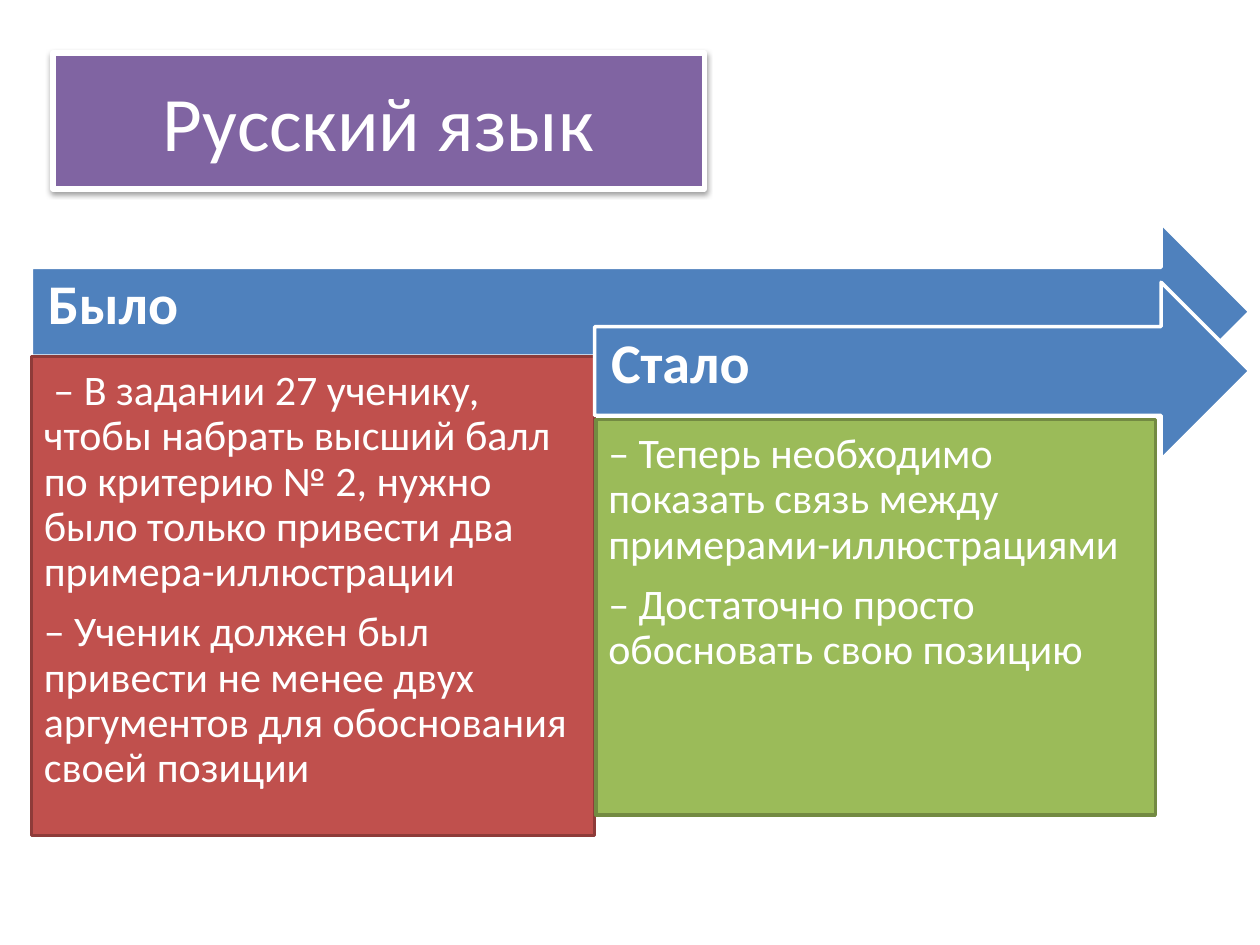
from lxml import etree
from pptx import Presentation, util as u
from pptx.dml.color import RGBColor
from pptx.enum import shapes, text
from pptx.oxml import parse_xml
from pptx.oxml.ns import nsdecls, qn

FONT = "Calibri"
WHITE = "FFFFFF"
BLUE = "4F81BD"


def rgb(hex_color):
    return RGBColor.from_string(hex_color)


def paint(sp, fill, line, width):
    sp.fill.solid()
    sp.fill.fore_color.rgb = rgb(fill)
    sp.line.color.rgb = rgb(line)
    sp.line.width = u.Pt(width)


def write(sp, *paragraphs, size, bold=False, align=text.PP_ALIGN.LEFT,
          anchor=text.MSO_ANCHOR.TOP, insets=(0.1, 0.1, 0.1, 0.1),
          spacing=0.9, after=0):
    tf = sp.text_frame
    tf.word_wrap = True
    tf.auto_size = text.MSO_AUTO_SIZE.NONE
    tf.vertical_anchor = anchor
    (tf.margin_left, tf.margin_top,
     tf.margin_right, tf.margin_bottom) = map(u.Inches, insets)
    for i, line in enumerate(paragraphs):
        p = tf.add_paragraph() if i else tf.paragraphs[0]
        p.alignment = align
        p.line_spacing = spacing
        p.space_after = u.Pt(after)
        r = p.add_run()
        r.text = line
        r.font.name = FONT
        r.font.size = u.Pt(size)
        r.font.bold = bold
        r.font.color.rgb = rgb(WHITE)


def add_shape(s, kind, box, fill, line):
    sp = s.shapes.add_shape(kind, *map(u.Inches, box))
    sp.shadow.inherit = False
    paint(sp, fill, line, 2)
    return sp


def add_arrow(s, box, label):
    sp = add_shape(s, shapes.MSO_SHAPE.RIGHT_ARROW, box, BLUE, WHITE)
    write(sp, label, size=32, bold=True, anchor=text.MSO_ANCHOR.MIDDLE,
          insets=(0.13, 0, 0.1, 0.09))


def add_panel(s, box, fill, line, paragraphs):
    sp = add_shape(s, shapes.MSO_SHAPE.RECTANGLE, box, fill, line)
    write(sp, *paragraphs, size=24, after=8.4)


def format_title(sp, box, label):
    sp.left, sp.top, sp.width, sp.height = map(u.Inches, box)
    # Rounded outline for the placeholder
    spPr = sp._element.spPr
    spPr.find(qn("a:xfrm")).addnext(parse_xml(
        f'<a:prstGeom {nsdecls("a")} prst="roundRect"><a:avLst/></a:prstGeom>'))
    paint(sp, "8064A2", WHITE, 3)
    # Soft shadow straight below
    effects = etree.SubElement(spPr, qn("a:effectLst"))
    shadow = etree.SubElement(
        effects, qn("a:outerShdw"), blurRad=str(u.Pt(3.1)),
        dist=str(u.Pt(1.6)), dir="5400000", rotWithShape="0")
    color = etree.SubElement(shadow, qn("a:srgbClr"), val="000000")
    etree.SubElement(color, qn("a:alpha"), val="38000")
    write(sp, label, size=44, align=text.PP_ALIGN.CENTER, spacing=1.0,
          anchor=text.MSO_ANCHOR.MIDDLE, insets=(0.1, 0.05, 0.1, 0.05))


def main():
    prs = Presentation()
    prs.slide_width, prs.slide_height = u.Inches(10), u.Inches(7.5)
    s = prs.slides.add_slide(prs.slide_layouts[5])

    # Title
    format_title(s.shapes.title, (0.42, 0.42, 5.17, 1.08), "Русский язык")

    # Before
    add_arrow(s, (0.25, 1.77, 9.67, 1.41), "Было")
    add_panel(s, (0.25, 2.83, 4.47, 3.8), "C0504D", "8E3B39", [
        " – В задании 27 ученику, чтобы набрать высший балл по критерию № 2, "
        "нужно было только привести два примера-иллюстрации",
        "– Ученик должен был привести не менее двух аргументов "
        "для обоснования своей позиции"])

    # After
    add_arrow(s, (4.72, 2.24, 5.2, 1.41), "Стало")
    add_panel(s, (4.73, 3.33, 4.44, 3.14), "9BBB59", "738A42", [
        "– Теперь необходимо показать связь между примерами-иллюстрациями",
        "– Достаточно просто обосновать свою позицию"])

    prs.save("out.pptx")


if __name__ == "__main__":
    main()
